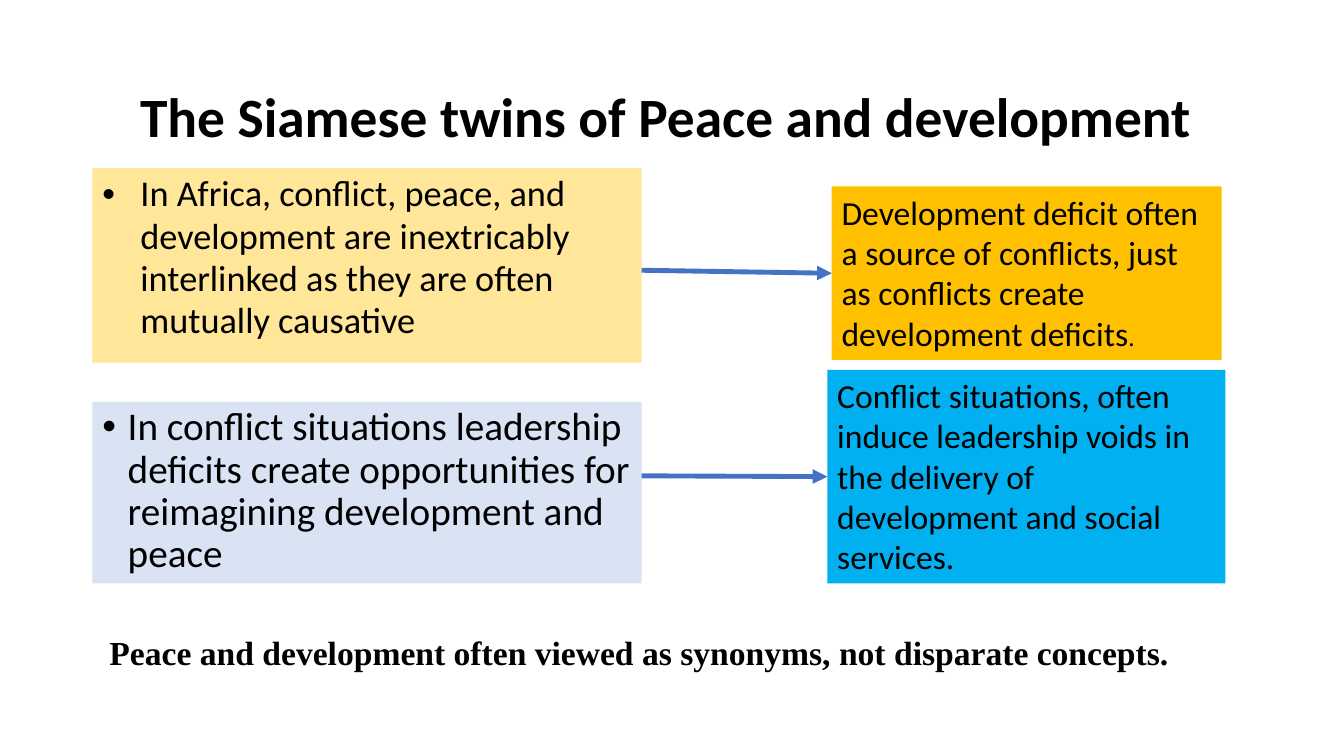
from lxml import etree
from pptx import Presentation
from pptx import util as u
from pptx.dml.color import RGBColor
from pptx.enum import shapes, text
from pptx.oxml.ns import qn


def color(value):
    return RGBColor.from_string(value)


def write(p, content, size, font="Calibri", bold=False, ink="000000"):
    """Add one formatted run to a paragraph."""
    r = p.add_run()
    r.text = content
    r.font.size = u.Pt(size)
    r.font.name = font
    r.font.bold = bold
    r.font.color.rgb = color(ink)


class SlideBuilder:
    line_color = "4472C4"
    line_width = 3.5

    def __init__(self, slide):
        self.slide = slide

    def frame(self, sp, anchor):
        tf = sp.text_frame
        tf.word_wrap = True
        tf.vertical_anchor = anchor
        return tf.paragraphs[0]

    def label(self, at, anchor=text.MSO_ANCHOR.TOP):
        sp = self.slide.shapes.add_textbox(*map(u.Cm, at))
        return self.frame(sp, anchor)

    def box(self, at, fill):
        sp = self.slide.shapes.add_shape(shapes.MSO_SHAPE.RECTANGLE, *map(u.Cm, at))
        sp.shadow.inherit = False
        sp.fill.solid()
        sp.fill.fore_color.rgb = color(fill)
        sp.line.fill.background()
        p = self.frame(sp, text.MSO_ANCHOR.TOP)
        p.alignment = text.PP_ALIGN.LEFT
        return sp, p

    def bullet(self, p, indent, spacing, after=0):
        p.line_spacing = spacing
        p.space_before, p.space_after = u.Pt(10), u.Pt(after)
        pPr = p._p.get_or_add_pPr()
        pPr.set("marL", str(u.Cm(indent)))
        pPr.set("indent", str(-u.Cm(indent)))
        etree.SubElement(pPr, qn("a:buFont"), typeface="Arial")
        etree.SubElement(pPr, qn("a:buChar"), char="•")

    def arrow(self, x, y, target):
        """Draw an arrow from a point to the left side of the target box."""
        c = self.slide.shapes.add_connector(
            shapes.MSO_CONNECTOR.STRAIGHT, u.Cm(x), u.Cm(y), u.Cm(x), u.Cm(y))
        c.end_connect(target, 1)
        c.line.color.rgb = color(self.line_color)
        c.line.width = u.Pt(self.line_width)
        etree.SubElement(c.line._get_or_add_ln(), qn("a:tailEnd"), type="triangle")
        etree.SubElement(c._element.spPr, qn("a:effectLst"))


def main():
    prs = Presentation()
    prs.slide_width, prs.slide_height = u.Cm(33.87), u.Cm(19.05)
    b = SlideBuilder(prs.slides.add_slide(prs.slide_layouts[6]))
    left, width = 2.33, 13.84

    # Title
    p = b.label((left, 1.02, 29.21, 3.68), text.MSO_ANCHOR.MIDDLE)
    p.alignment = text.PP_ALIGN.CENTER
    p.line_spacing = 1.07
    p.space_after = u.Pt(8)
    write(p, "The Siamese twins of Peace and development ", 39.6, bold=True)

    # Premises on the left
    _, p = b.box((left, 4.24, width, 4.9), "FFE699")
    b.bullet(p, 0.96, 0.97, after=8)
    write(p, "In Africa, conflict, peace, and development are inextricably "
             "interlinked as they are often mutually causative", 25.9)

    _, p = b.box((left, 10.13, width, 4.57), "DAE3F3")
    b.bullet(p, 0.64, 0.9)
    write(p, "In conflict situations leadership deficits create opportunities "
             "for reimagining development and peace", 28)

    # Consequences on the right
    deficit, p = b.box((20.96, 4.7, 9.83, 4.37), "FFC000")
    write(p, "Development deficit often a source of conflicts, just as "
             "conflicts create development deficits", 24)
    write(p, ".", 18)

    voids, p = b.box((20.85, 9.32, 10.03, 5.38), "00B0F0")
    write(p, "Conflict situations, often induce leadership voids in the "
             "delivery of development and social services.", 24)

    # Arrows from premise to consequence
    for y, target in ((6.81, deficit), (11.99, voids)):
        b.arrow(left + width, y, target)

    # Closing statement
    p = b.label((2.51, 15.8, 28.37, 1.27))
    write(p, "Peace and development often viewed as synonyms, not disparate "
             "concepts.", 24, font="Times New Roman", bold=True)

    prs.save("out.pptx")


if __name__ == "__main__":
    main()
